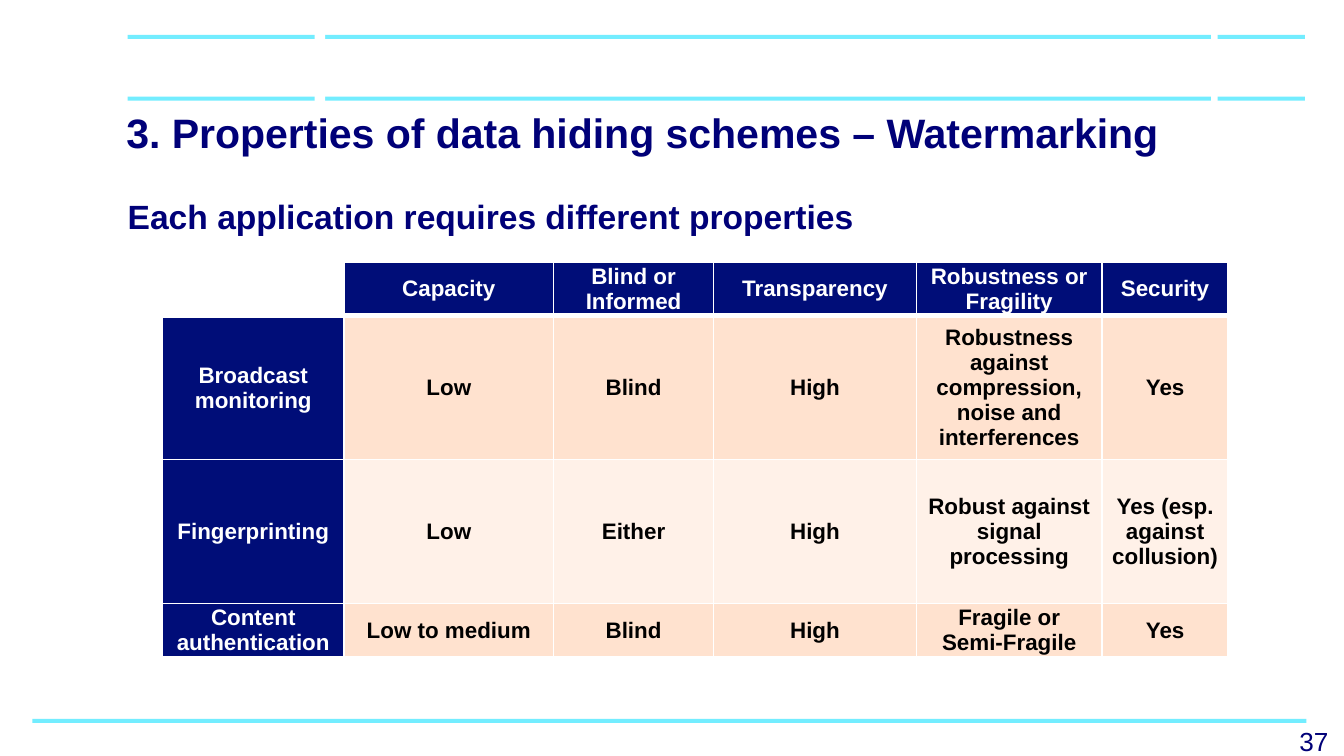
from lxml import etree
from pptx import Presentation
from pptx import util as u
from pptx.dml import color
from pptx.enum import shapes, text
from pptx.oxml import ns

WIDTH = 10
HEIGHT = WIDTH * 9 / 16
NAVY, HEADER, AQUA, WHITE, BLACK = "000078", "000D78", "73EDFF", "FFFFFF", "000000"
BANDS = ["FFE2CF", "FFF1E8"]
COLUMNS = [1.35, 1.56, 1.19, 1.51, 1.38, 0.94]
ROWS = [0.36, 1.07, 1.07, 0.36]
PROPERTIES = [
    ["", "Capacity", "Blind or Informed", "Transparency", "Robustness or Fragility", "Security"],
    ["Broadcast monitoring", "Low", "Blind", "High",
     "Robustness against compression, noise and interferences", "Yes"],
    ["Fingerprinting", "Low", "Either", "High",
     "Robust against signal processing", "Yes (esp. against collusion)"],
    ["Content authentication", "Low to medium", "Blind", "High", "Fragile or Semi-Fragile", "Yes"],
]


def rgb(value):
    return color.RGBColor.from_string(value)


def inches(box):
    return [u.Inches(length) for length in box]


def write(paragraph, words, size, tone, bold=True, align=text.PP_ALIGN.LEFT):
    paragraph.alignment = align
    run = paragraph.add_run()
    run.text = words
    run.font.name = "Arial"
    run.font.size = u.Pt(size)
    run.font.bold = bold
    run.font.color.rgb = rgb(tone)


def add_bar(slide, box, tone):
    bar = slide.shapes.add_shape(shapes.MSO_SHAPE.RECTANGLE, *inches(box))
    bar.shadow.inherit = False
    bar.fill.solid()
    bar.fill.fore_color.rgb = rgb(tone)
    bar.line.fill.background()


def add_rules(slide, box):
    left, top, width, height = box
    thickness = 0.03
    tab = 0.65
    gap = 0.05
    for y in (top + height - thickness, top):
        add_bar(slide, (left, y, width - tab - gap, thickness), AQUA)
        add_bar(slide, (left + width - tab, y, tab, thickness), AQUA)
    add_bar(slide, (left + 1.39, top / 2, 0.08, 0.88), WHITE)


def fill_placeholder(holder, box, words, size, anchor):
    holder.left, holder.top, holder.width, holder.height = inches(box)
    holder.element.getparent().append(holder.element)
    frame = holder.text_frame
    frame.word_wrap = True
    frame.auto_size = text.MSO_AUTO_SIZE.NONE
    frame.vertical_anchor = anchor
    frame.margin_left = frame.margin_right = u.Inches(0.1)
    frame.margin_top = frame.margin_bottom = u.Inches(0.1)
    paragraph = frame.paragraphs[0]
    paragraph.space_before = u.Pt(0)
    write(paragraph, words, size, NAVY)
    return paragraph


def add_heading(slide, box):
    fill_placeholder(slide.shapes.title, box,
                     "3. Properties of data hiding schemes – Watermarking",
                     22, text.MSO_ANCHOR.MIDDLE)


def add_statement(slide, box):
    paragraph = fill_placeholder(slide.placeholders[1], box,
                                 "Each application requires different properties",
                                 18, text.MSO_ANCHOR.TOP)
    paragraph.line_spacing = 1.15
    properties = paragraph._p.get_or_add_pPr()
    properties.set("marL", "0")
    properties.set("indent", "0")
    etree.SubElement(properties, ns.qn("a:buNone"))


def add_page_number(slide, box):
    frame = slide.shapes.add_textbox(*inches(box)).text_frame
    frame.word_wrap = True
    frame.auto_size = text.MSO_AUTO_SIZE.SHAPE_TO_FIT_TEXT
    write(frame.paragraphs[0], "37", 14, NAVY, bold=False)


def add_borders(cell, weights):
    properties = cell._tc.get_or_add_tcPr()
    for side, weight in weights.items():
        line = etree.SubElement(properties, ns.qn(f"a:ln{side}"), w=str(u.Pt(weight)))
        solid = etree.SubElement(line, ns.qn("a:solidFill"))
        etree.SubElement(solid, ns.qn("a:srgbClr"), val=WHITE)


def style_cell(cell, words, row, column):
    cell.margin_left = cell.margin_right = u.Inches(0.07)
    cell.margin_top = cell.margin_bottom = 0
    cell.vertical_anchor = text.MSO_ANCHOR.MIDDLE
    add_borders(cell, {"L": 1, "R": 1, "T": 3 if row == 1 else 1, "B": 3 if row == 0 else 1})
    if not words:
        cell.fill.background()
        return
    heading = row == 0 or column == 0
    cell.fill.solid()
    cell.fill.fore_color.rgb = rgb(HEADER if heading else BANDS[(row - 1) % 2])
    write(cell.text_frame.paragraphs[0], words, 12, WHITE if heading else BLACK,
          align=text.PP_ALIGN.CENTER)


def add_properties_table(slide, left, top):
    box = (left, top, sum(COLUMNS), sum(ROWS))
    table = slide.shapes.add_table(len(ROWS), len(COLUMNS), *inches(box)).table
    for column, width in zip(table.columns, COLUMNS):
        column.width = u.Inches(width)
    for row, height in zip(table.rows, ROWS):
        row.height = u.Inches(height)
    table.first_row = table.horz_banding = False
    for r, entries in enumerate(PROPERTIES):
        for c, words in enumerate(entries):
            style_cell(table.cell(r, c), words, r, c)


def main():
    deck = Presentation()
    deck.slide_width, deck.slide_height = inches((WIDTH, HEIGHT))
    slide = deck.slides.add_slide(deck.slide_layouts[1])
    add_bar(slide, (0.24, 5.35, 9.48, 0.03), AQUA)
    add_rules(slide, (0.95, 0.26, 8.76, 0.49))
    add_statement(slide, (0.85, 1.31, 8.86, 3.81))
    add_heading(slide, (0.84, 0.71, 8.86, 0.55))
    add_page_number(slide, (9.57, 5.35, 0.43, 0.34))
    add_properties_table(slide, 1.21, 1.95)
    deck.save("out.pptx")


if __name__ == "__main__":
    main()
